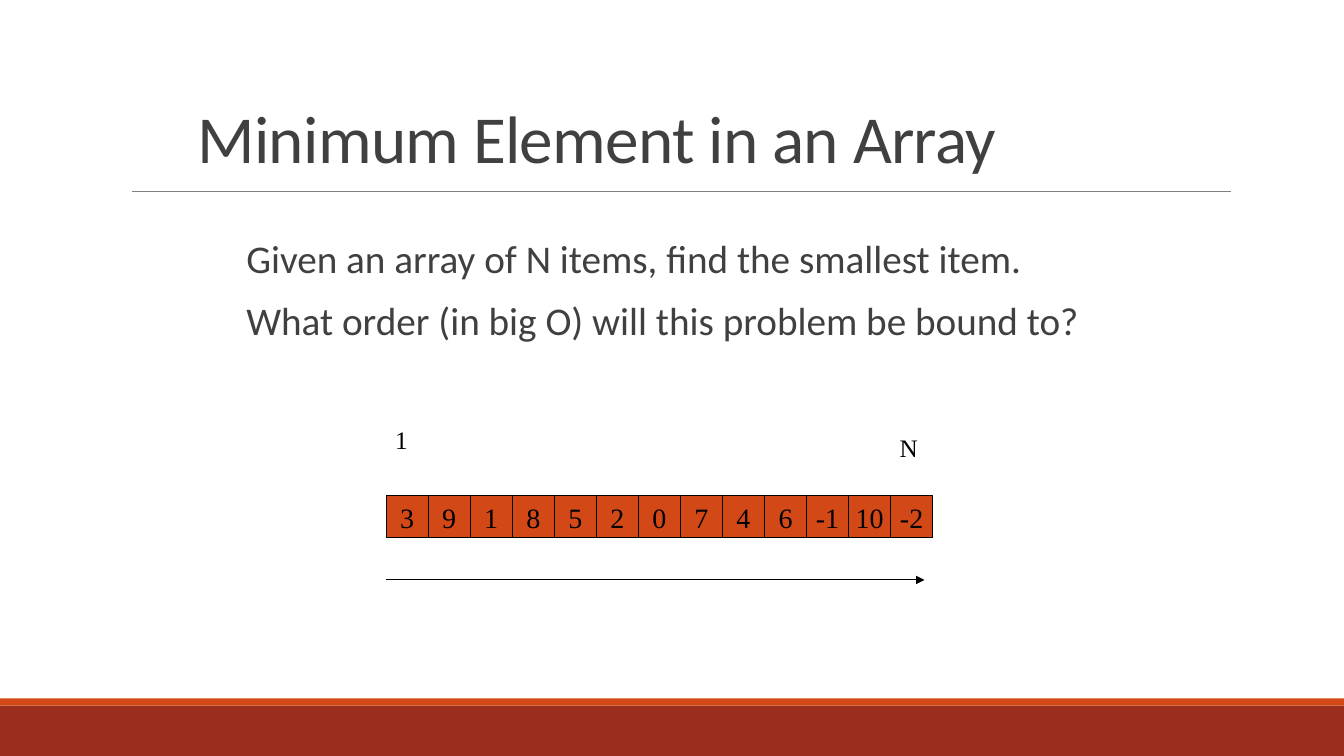
from lxml import etree
from pptx import Presentation
from pptx.dml.color import RGBColor
from pptx.enum.shapes import MSO_CONNECTOR, MSO_SHAPE
from pptx.enum.text import MSO_ANCHOR, PP_ALIGN
from pptx.oxml.ns import qn
from pptx.util import Inches, Pt

BRICK = RGBColor(0x9B, 0x2D, 0x1F)
ORANGE = RGBColor(0xD3, 0x48, 0x17)
GRAY = RGBColor(0x80, 0x80, 0x80)
CHARCOAL = RGBColor(0x40, 0x40, 0x40)
BLACK = RGBColor(0, 0, 0)

SLIDE_WIDTH, SLIDE_HEIGHT = 13.33, 7.5
SERIF = "Times New Roman"
ITEMS = [3, 9, 1, 8, 5, 2, 0, 7, 4, 6, -1, 10, -2]
QUESTIONS = [
    "Given an array of N items, find the smallest item.",
    "What order (in big O) will this problem be bound to?",
]


def write(frame, *lines, size, font=SERIF, color=BLACK, align=PP_ALIGN.LEFT,
          anchor=MSO_ANCHOR.TOP, wrap=False, line_spacing=None,
          before=None, after=None, tracking=None):
    """Fill a text frame, one paragraph per line, and return the paragraphs."""
    frame.word_wrap = wrap
    frame.vertical_anchor = anchor
    for index, line in enumerate(lines):
        paragraph = frame.add_paragraph() if index else frame.paragraphs[0]
        paragraph.alignment = align
        if line_spacing is not None:
            paragraph.line_spacing = line_spacing
        if before is not None:
            paragraph.space_before = Pt(before)
        if after is not None:
            paragraph.space_after = Pt(after)
        run = paragraph.add_run()
        run.text = line
        run.font.size = Pt(size)
        run.font.name = font
        run.font.color.rgb = color
        if tracking is not None:
            run.font._element.set("spc", str(round(tracking * 100)))
    return frame.paragraphs


def add_textbox(slide, left, top, width, height):
    return slide.shapes.add_textbox(
        Inches(left), Inches(top), Inches(width), Inches(height)).text_frame


def add_rectangle(slide, left, top, width, height, fill, outline=None):
    rectangle = slide.shapes.add_shape(
        MSO_SHAPE.RECTANGLE, Inches(left), Inches(top), Inches(width), Inches(height))
    rectangle.shadow.inherit = False
    rectangle.fill.solid()
    rectangle.fill.fore_color.rgb = fill
    if outline is None:
        rectangle.line.fill.background()
    else:
        rectangle.line.color.rgb = outline
        rectangle.line.width = Pt(0.75)
    return rectangle


def add_horizontal_line(slide, left, right, y, color, weight, arrow=False):
    line = slide.shapes.add_connector(
        MSO_CONNECTOR.STRAIGHT, Inches(left), Inches(y), Inches(right), Inches(y))
    line.line.color.rgb = color
    line.line.width = Pt(weight)
    if arrow:
        etree.SubElement(line.line._get_or_add_ln(), qn("a:tailEnd"), type="triangle")
    etree.SubElement(line._element.spPr, qn("a:effectLst"))


def add_blank_bullet(paragraph, indent):
    properties = paragraph._p.get_or_add_pPr()
    properties.set("marL", str(Inches(indent)))
    properties.set("indent", str(-Inches(indent)))
    bullet_color = etree.SubElement(properties, qn("a:buClr"))
    etree.SubElement(bullet_color, qn("a:srgbClr"), val=str(ORANGE))
    etree.SubElement(properties, qn("a:buChar"), char=" ")


def build_footer(slide, top, height, stripe=0.07):
    add_rectangle(slide, 0, top, SLIDE_WIDTH, height, BRICK)
    add_rectangle(slide, 0, top - stripe, SLIDE_WIDTH, stripe, ORANGE)


def build_title(slide, left, top, width, height):
    add_horizontal_line(slide, left - 0.55, left + 10.35, top + height + 0.09, GRAY, 0.5)
    write(add_textbox(slide, left, top, width, height), "Minimum Element in an Array",
          size=48, font="Calibri", color=CHARCOAL, anchor=MSO_ANCHOR.BOTTOM,
          wrap=True, line_spacing=0.85, tracking=-0.5)


def build_questions(slide, left, top, width, height):
    frame = add_textbox(slide, left, top, width, height)
    frame.margin_left = frame.margin_right = 0
    for paragraph in write(frame, *QUESTIONS, size=28, font="Calibri", color=CHARCOAL,
                           wrap=True, line_spacing=0.9, before=12, after=2):
        add_blank_bullet(paragraph, 0.1)


def build_array(slide, left, top, width):
    """Draw the row of cells, the scan arrow below and the index labels above."""
    side = width / len(ITEMS)
    for index, item in enumerate(ITEMS):
        cell = add_rectangle(slide, left + index * side, top, side, side, ORANGE, BLACK)
        write(cell.text_frame, str(item), size=20, align=PP_ALIGN.CENTER,
              anchor=MSO_ANCHOR.MIDDLE)
    add_horizontal_line(slide, left, left + width - 0.08, top + 2 * side, BLACK, 0.75,
                        arrow=True)
    last = left + width - side
    write(add_textbox(slide, last - 0.01, top - 0.68, 0.38, 0.4), "N", size=18)
    write(add_textbox(slide, left - 0.01, top - 0.76, 0.33, 0.4), "1", size=18)


def main():
    presentation = Presentation()
    presentation.slide_width = Inches(SLIDE_WIDTH)
    presentation.slide_height = Inches(SLIDE_HEIGHT)
    slide = presentation.slides.add_slide(presentation.slide_layouts[6])
    build_footer(slide, 7, 0.5)
    build_title(slide, 1.86, 0.56, 8.5, 1.25)
    build_questions(slide, 2.25, 2.33, 9, 1.33)
    build_array(slide, 3.83, 4.92, 5.42)
    presentation.save("out.pptx")


if __name__ == "__main__":
    main()
